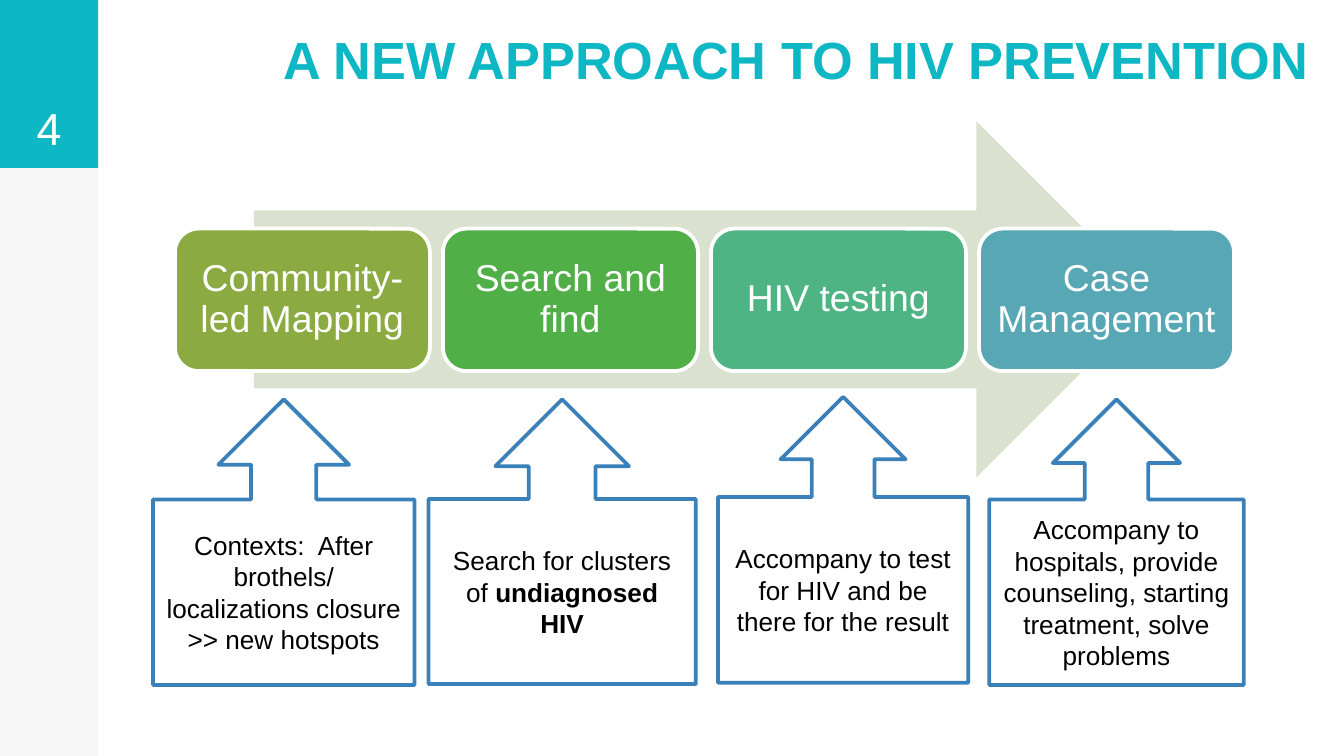
from pptx import Presentation
from pptx.dml.color import RGBColor
from pptx.enum.shapes import MSO_SHAPE
from pptx.enum.text import MSO_ANCHOR, PP_ALIGN
from pptx.util import Pt

COLORS = {
    "teal": "0DB7C4", "rail": "F7F7F7", "white": "FFFFFF", "black": "000000",
    "arrow": "DAE2CF", "outline": "3A81BA",
    "olive": "8BAB42", "green": "50B047", "mint": "4EB484", "blue": "57A7B5",
}
FONT = "Arial"

TITLE = "A NEW APPROACH TO HIV PREVENTION"
PAGE_NUMBER = "4"
STEPS = [
    ("Community-led Mapping", "olive"),
    ("Search and find", "green"),
    ("HIV testing", "mint"),
    ("Case Management", "blue"),
]
# Each callout: (left, top, width, height), paragraphs of (text, bold) spans
CALLOUTS = [
    ((82, 214, 140, 153), [[("Contexts:  After brothels/", False)],
                           [("localizations closure >> new hotspots", False)]]),
    ((229.6, 214, 143.2, 152.5), [[("Search for clusters of ", False),
                                   ("undiagnosed HIV", True)]]),
    ((384.7, 212.6, 134, 153.2), [[("Accompany to test for HIV and be there for the result", False)]]),
    ((530, 214, 136.3, 153), [[("Accompany to hospitals, provide counseling, "
                                "starting treatment, solve problems", False)]]),
]

SLIDE_SIZE = (720, 405)
RAIL_WIDTH, TAB_HEIGHT = 52.6, 90
STEP_LEFT, STEP_TOP, STEP_WIDTH, STEP_HEIGHT = 93.7, 122.5, 136.6, 76.3
STEP_PITCH = 143.6


def rgb(name):
    return RGBColor.from_string(COLORS[name])


def add_block(page, kind, place, fill, line=None):
    block = page.shapes.add_shape(kind, *map(Pt, place))
    block.shadow.inherit = False
    block.fill.solid()
    block.fill.fore_color.rgb = rgb(fill)
    if line:
        block.line.color.rgb = rgb(line)
        block.line.width = Pt(2)
    else:
        block.line.fill.background()
    return block


def write(box, paragraphs, size, color, anchor=MSO_ANCHOR.MIDDLE, bold=False,
          align=PP_ALIGN.CENTER, inset=(7.2, 3.6), spacing=None):
    """Fill a box with paragraphs, each a list of (text, bold) spans."""
    frame = box.text_frame
    across, down = map(Pt, inset)
    frame_format = {
        "word_wrap": True, "vertical_anchor": anchor,
        "margin_left": across, "margin_right": across,
        "margin_top": down, "margin_bottom": down,
    }
    for name, value in frame_format.items():
        setattr(frame, name, value)
    for index, spans in enumerate(paragraphs):
        para = frame.add_paragraph() if index else frame.paragraphs[0]
        para.alignment = align
        if spacing:
            para.line_spacing = spacing
        for text, strong in spans:
            span = para.add_run()
            span.text = text
            font_format = {"name": FONT, "size": Pt(size), "bold": bold or strong}
            for name, value in font_format.items():
                setattr(span.font, name, value)
            span.font.color.rgb = rgb(color)


def main():
    deck = Presentation()
    deck.slide_width, deck.slide_height = map(Pt, SLIDE_SIZE)
    page = deck.slides.add_slide(deck.slide_layouts[6])

    add_block(page, MSO_SHAPE.RECTANGLE, (0, 0, RAIL_WIDTH, SLIDE_SIZE[1]), "rail")
    tab = add_block(page, MSO_SHAPE.RECTANGLE, (0, 0, RAIL_WIDTH, TAB_HEIGHT), "teal")
    write(tab, [[(PAGE_NUMBER, False)]], 24, "white", MSO_ANCHOR.BOTTOM, inset=(7.2, 7.2))

    title = page.shapes.add_textbox(*map(Pt, (144.7, 0, 605.5, 55.4)))
    write(title, [[(TITLE, True)]], 28, "teal", MSO_ANCHOR.BOTTOM,
          align=PP_ALIGN.LEFT, inset=(7.2, 7.2))

    add_block(page, MSO_SHAPE.RIGHT_ARROW, (136.1, 65, 482.4, 190.8), "arrow")
    for index, (label, color) in enumerate(STEPS):
        place = (STEP_LEFT + index * STEP_PITCH, STEP_TOP, STEP_WIDTH, STEP_HEIGHT)
        step = add_block(page, MSO_SHAPE.ROUNDED_RECTANGLE, place, color, "white")
        write(step, [[(label, False)]], 20, "white", inset=(5.6, 5.6), spacing=0.9)

    for place, paragraphs in CALLOUTS:
        callout = add_block(page, MSO_SHAPE.UP_ARROW_CALLOUT, place, "white", "outline")
        write(callout, paragraphs, 14, "black")

    deck.save("out.pptx")


if __name__ == "__main__":
    main()
